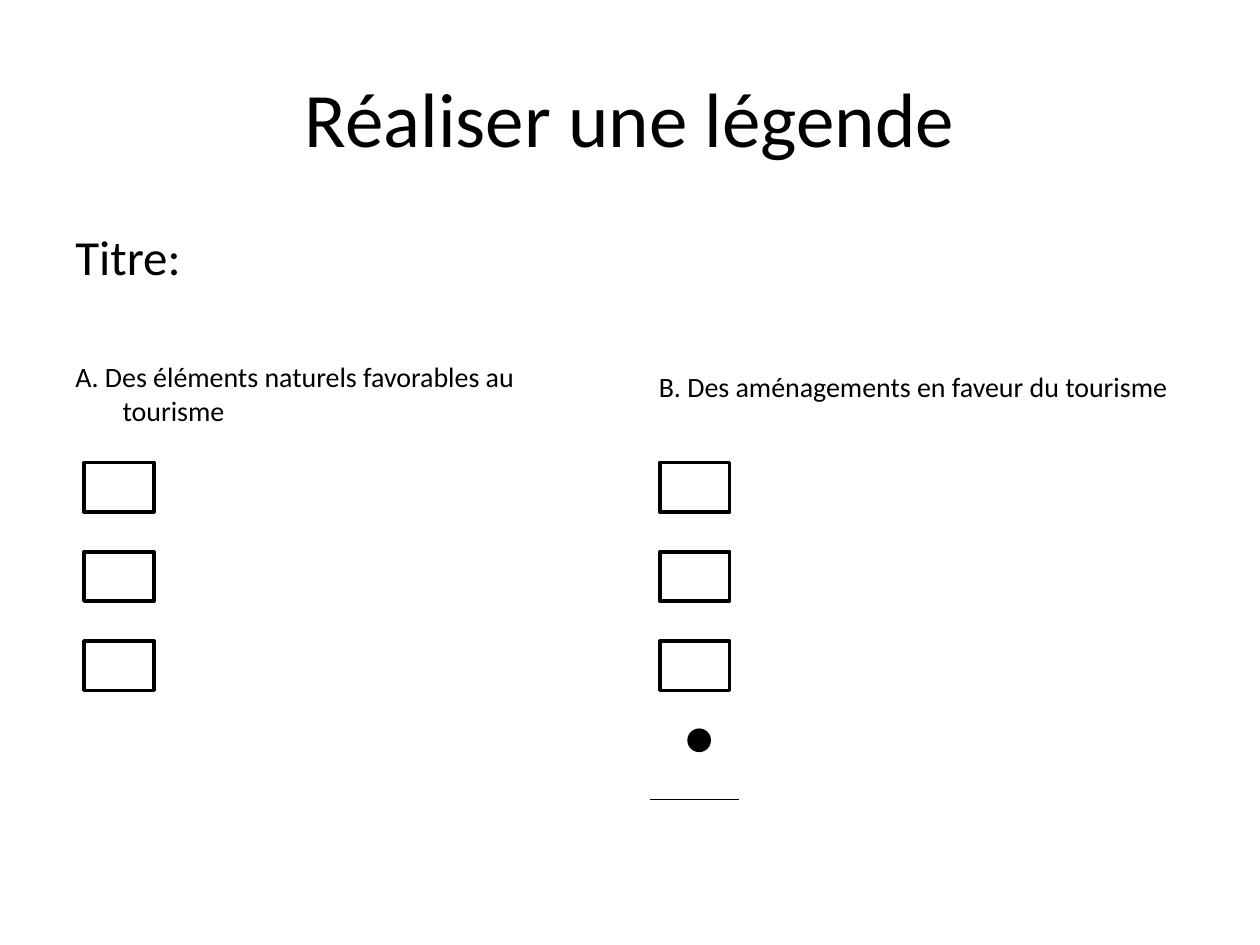
from dataclasses import dataclass

from lxml.etree import SubElement
from pptx import Presentation
from pptx.dml.color import RGBColor
from pptx.enum.shapes import MSO_CONNECTOR as Link, MSO_SHAPE as Kind
from pptx.enum.text import MSO_ANCHOR as Anchor, MSO_AUTO_SIZE as Auto, PP_ALIGN as Align
from pptx.oxml.ns import qn
from pptx.util import Pt

BLACK = "000000"
FONT = "Calibri"


@dataclass
class Box:
    left: float
    top: float
    width: float
    height: float

    def pts(self) -> list:
        return [Pt(v) for v in (self.left, self.top, self.width, self.height)]


@dataclass
class Para:
    text: str
    size: float
    align: Align = Align.LEFT
    before: float = 0
    hang: float = 0


def paint(target, color: str) -> None:
    """Give a fill or a font a solid colour."""
    if hasattr(target, "solid"):
        target.solid()
        target.fore_color.rgb = RGBColor.from_string(color)
    else:
        target.color.rgb = RGBColor.from_string(color)


def add_text(slide, box: Box, paras: list[Para], anchor=Anchor.TOP, wrap: bool = True) -> None:
    frame = slide.shapes.add_textbox(*box.pts()).text_frame
    frame.word_wrap = wrap
    frame.auto_size = Auto.NONE if wrap else Auto.SHAPE_TO_FIT_TEXT
    frame.vertical_anchor = anchor
    for i, item in enumerate(paras):
        para = frame.add_paragraph() if i else frame.paragraphs[0]
        para.alignment = item.align
        para.space_before = Pt(item.before)
        if item.hang:
            props = para._p.get_or_add_pPr()
            props.set("marL", str(Pt(item.hang)))
            props.set("indent", str(Pt(-item.hang)))
        run = para.add_run()
        run.text = item.text
        run.font.name, run.font.size = FONT, Pt(item.size)
        paint(run.font, BLACK)


def add_mark(slide, kind: Kind, box: Box, fill: str | None = None) -> None:
    shape = slide.shapes.add_shape(kind, *box.pts())
    shape.shadow.inherit = False
    if fill:
        paint(shape.fill, fill)
    else:
        shape.fill.background()
    paint(shape.line.fill, BLACK)
    shape.line.width = Pt(2)


def add_line(slide, left: float, right: float, y: float) -> None:
    line = slide.shapes.add_connector(Link.STRAIGHT, Pt(left), Pt(y), Pt(right), Pt(y))
    paint(line.line.fill, BLACK)
    line.line.width = Pt(0.75)
    SubElement(line._element.spPr, qn("a:effectLst"))


def main() -> None:
    deck = Presentation()
    deck.slide_width, deck.slide_height = Pt(720), Pt(540)
    slide = deck.slides.add_slide(deck.slide_layouts[6])

    # Heading
    add_text(slide, Box(36, 21.6, 648, 90),
             [Para("Réaliser une légende", 44, Align.CENTER)], Anchor.MIDDLE)

    # Map title and left column
    add_text(slide, Box(36, 126, 306.7, 356.4), [
        Para("Titre:", 28, hang=27),
        Para("A. Des éléments naturels favorables au tourisme", 16, before=42.5, hang=27),
    ])

    # Right column
    add_text(slide, Box(369.4, 207.4, 312.5, 26.6),
             [Para("B. Des aménagements en faveur du tourisme", 16)], wrap=False)

    # Key boxes: three rows in each column
    for left in (377, 48):
        for row in range(3):
            add_mark(slide, Kind.RECTANGLE, Box(left, 264.3 + row * 51, 40, 28.2))

    # Point and line symbols
    add_mark(slide, Kind.OVAL, Box(393.8, 417.3, 11.5, 11.5), BLACK)
    add_line(slide, 371.5, 422.5, 457)

    deck.save("out.pptx")


if __name__ == "__main__":
    main()
